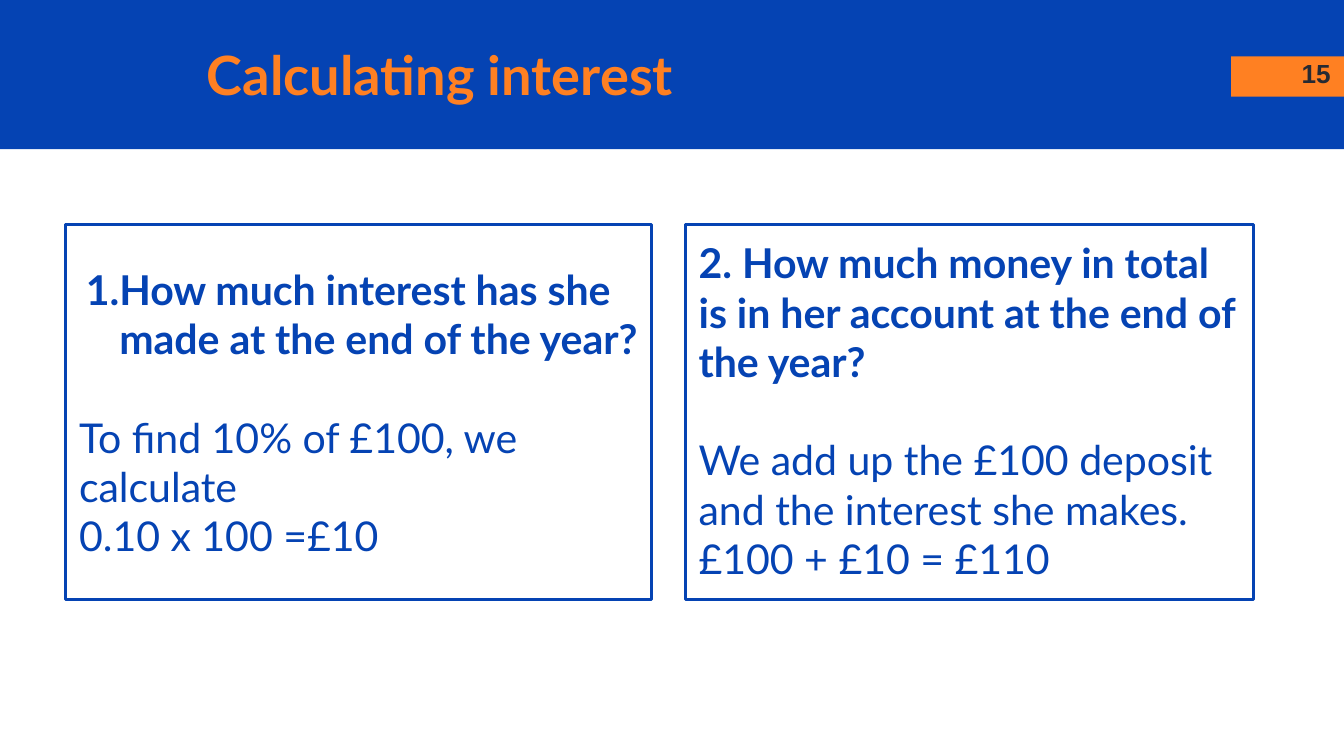
"""Build a slide with worked answers on calculating interest."""
from dataclasses import dataclass

from lxml import etree
from pptx import Presentation
from pptx.dml.color import RGBColor
from pptx.enum.shapes import MSO_SHAPE
from pptx.enum.text import MSO_ANCHOR, MSO_AUTO_SIZE, PP_ALIGN
from pptx.oxml.ns import qn
from pptx.util import Inches, Pt

RECTANGLE = MSO_SHAPE.RECTANGLE
TOP, MIDDLE = MSO_ANCHOR.TOP, MSO_ANCHOR.MIDDLE
LEFT, RIGHT = PP_ALIGN.LEFT, PP_ALIGN.RIGHT
NO_AUTOFIT = MSO_AUTO_SIZE.NONE
TITLE_ONLY = 5


@dataclass(frozen=True)
class Theme:
    """Hold the colours, fonts and type sizes of the deck."""

    blue: str = "0543B3"
    orange: str = "FF8022"
    dark: str = "262A33"
    font: str = "Lato"
    number_font: str = "Arial"
    title_size: int = 29
    body_size: int = 22
    number_size: int = 14
    answer_gap: float = 26.4


THEME = Theme()


def style(paragraph, size, color, bold=True, font=THEME.font, align=LEFT):
    """Set the alignment and font of a paragraph."""
    paragraph.alignment = align
    paragraph.font.name = font
    paragraph.font.size = Pt(size)
    paragraph.font.bold = bold
    paragraph.font.color.rgb = RGBColor.from_string(color)


def prepare_frame(shape, anchor):
    """Give a shape's text even margins, wrapping and an anchor."""
    frame = shape.text_frame
    frame.auto_size = NO_AUTOFIT
    frame.word_wrap = True
    frame.vertical_anchor = anchor
    frame.margin_left = frame.margin_right = Inches(0.1)
    frame.margin_top = frame.margin_bottom = Inches(0.1)
    return frame


def add_rectangle(slide, bounds, fill=None, line=None):
    """Add a flat rectangle with an optional fill and outline."""
    box = slide.shapes.add_shape(RECTANGLE, *map(Inches, bounds))
    box.shadow.inherit = False
    if fill:
        box.fill.solid()
        box.fill.fore_color.rgb = RGBColor.from_string(fill)
    else:
        box.fill.background()
    if line:
        box.line.color.rgb = RGBColor.from_string(line)
        box.line.width = Pt(1.5)
    else:
        box.line.fill.background()
    return box


def number_paragraph(paragraph):
    """Give a paragraph an automatic number and a hanging indent."""
    properties = paragraph._p.get_or_add_pPr()
    properties.set("marL", str(Inches(0.3)))
    properties.set("indent", str(Inches(-0.25)))
    color = etree.SubElement(properties, qn("a:buClr"))
    etree.SubElement(color, qn("a:srgbClr"), val=THEME.blue)
    etree.SubElement(properties, qn("a:buAutoNum"), type="arabicPeriod")


def add_question_box(slide, left, width, question, answers, anchor, numbered=False):
    """Add an outlined box with a bold question and its worked answer."""
    box = add_rectangle(slide, (left, 1.67, width, 2.79), line=THEME.blue)
    frame = prepare_frame(box, anchor)
    heading = frame.paragraphs[0]
    heading.text = question
    if numbered:
        number_paragraph(heading)
    style(heading, THEME.body_size, THEME.blue)
    for index, answer in enumerate(answers):
        paragraph = frame.add_paragraph()
        paragraph.text = answer
        if index == 0:
            paragraph.space_before = Pt(THEME.answer_gap)
        style(paragraph, THEME.body_size, THEME.blue, bold=False)


def add_page_number(slide, number):
    """Add the orange tab and the page number on it."""
    add_rectangle(slide, (9.16, 0.42, 0.84, 0.3), fill=THEME.orange)
    box = slide.shapes.add_textbox(*map(Inches, (9.4, 0.33, 0.6, 0.43)))
    paragraph = prepare_frame(box, TOP).paragraphs[0]
    paragraph.text = number
    style(paragraph, THEME.number_size, THEME.dark, font=THEME.number_font, align=RIGHT)


def set_title(slide, text):
    """Fill the title placeholder and bring it in front of the band."""
    title = slide.shapes.title
    title.left, title.top, title.width, title.height = map(Inches, (1.44, 0.27, 8.46, 0.56))
    paragraph = prepare_frame(title, MIDDLE).paragraphs[0]
    paragraph.text = text
    style(paragraph, THEME.title_size, THEME.orange)
    slide.shapes.element.append(title.element)


def main():
    """Build and save the deck."""
    deck = Presentation()
    deck.slide_width = Inches(10)
    deck.slide_height = deck.slide_width * 9 // 16
    slide = deck.slides.add_slide(deck.slide_layouts[TITLE_ONLY])
    add_rectangle(slide, (0, 0, 10, 1.11), fill=THEME.blue)
    add_page_number(slide, "15")
    add_question_box(
        slide, 0.49, 4.36,
        "How much interest has she made at the end of the year?",
        ["To find 10% of £100, we calculate", "0.10 x 100 =£10"],
        MIDDLE, numbered=True,
    )
    add_question_box(
        slide, 5.1, 4.23,
        "2. How much money in total is in her account at the end of the year?",
        ["We add up the £100 deposit and the interest she makes.", "£100 + £10 = £110"],
        TOP,
    )
    set_title(slide, "Calculating interest")
    deck.save("out.pptx")


if __name__ == "__main__":
    main()
